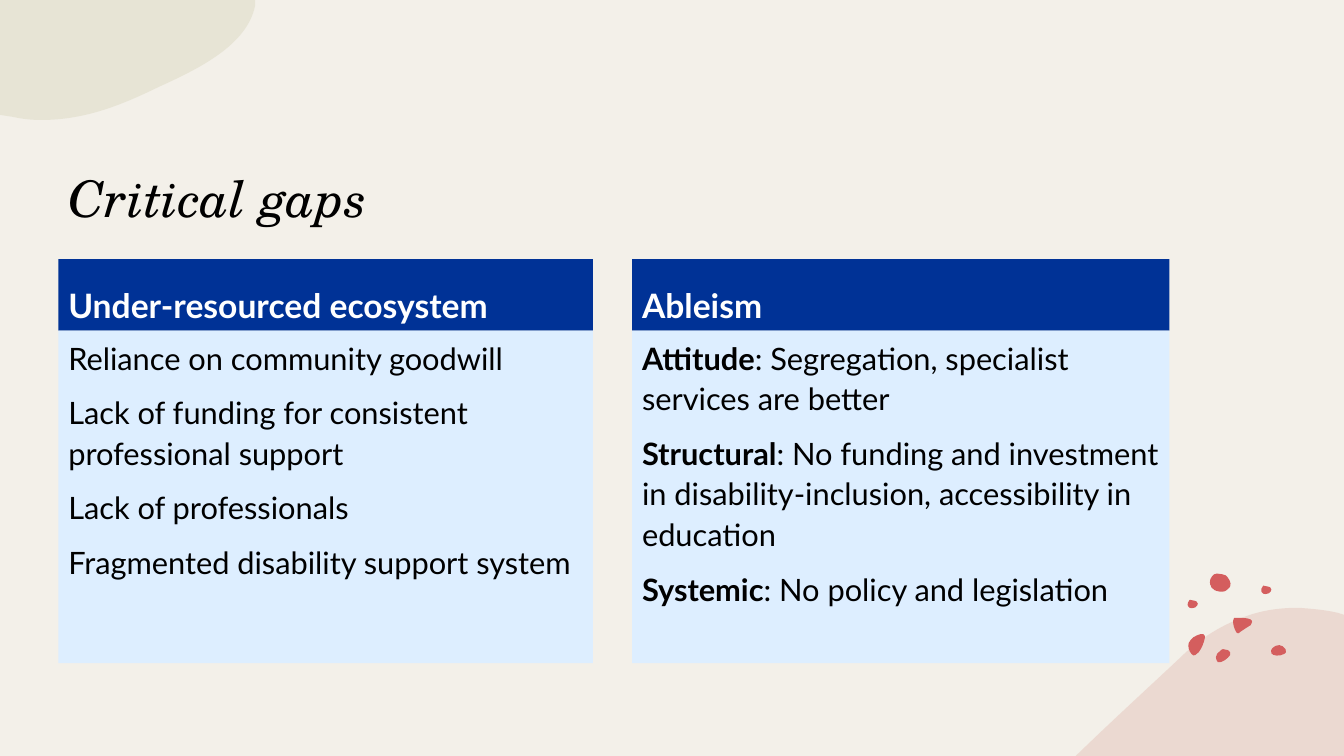
import pptx
import pptx.util
import pptx.dml.color
import pptx.enum.text
import pptx.enum.shapes
import pptx.oxml
import pptx.oxml.ns
import lxml.etree
from dataclasses import dataclass

TITLE = "Critical gaps"
CARDS = [
    ("Under-resourced ecosystem", [
        ("", "Reliance on community goodwill"),
        ("", "Lack of funding for consistent professional support"),
        ("", "Lack of professionals"),
        ("", "Fragmented disability support system"),
    ]),
    ("Ableism", [
        ("Attitude", ": Segregation, specialist services are better"),
        ("Structural", ": No funding and investment in disability-inclusion, "
                       "accessibility in education"),
        ("Systemic", ": No policy and legislation"),
    ]),
]


@dataclass(frozen=True)
class Theme:
    page: str = "F3F0E9"
    ink: str = "000000"
    light: str = "FFFFFF"
    navy: str = "003296"
    sky: str = "DDEEFF"
    rose: str = "E5C4BA"
    olive: str = "DCD9C3"
    coral: str = "D45E5E"
    serif: str = "TeX Gyre Schola"
    sans: str = "Lato"
    title: int = 36
    head: int = 24
    body: int = 22


LOOK = Theme()
WIDE, HIGH = 13.33, 7.5
LEFT, RIGHT = 0.58, 11.6
COLS = [(0.58, 5.3), (6.27, 5.33)]
ROWS = {"title": (0.86, 1.45), "head": (2.57, 0.71), "body": (3.28, 3.3)}

PEBBLE = [(0, 0.05), (0, 0.05, 0, 0.01, 0.02, 0), (0.04, 0, 0.05, 0, 0.07, 0.01),
          (0.08, 0.01, 0.1, 0.02, 0.1, 0.04), (0.1, 0.05, 0.09, 0.07, 0.08, 0.07),
          (0.08, 0.07, 0.08, 0.08, 0.06, 0.08), (0.05, 0.08, 0.03, 0.09, 0.02, 0.08),
          (0, 0.06, 0, 0.06, 0, 0.05)]
HILL = [(2.21, 0), (2.34, 0.01, 2.47, 0.02, 2.6, 0.05), (2.66, 0.07), (2.66, 1.47),
        (0, 1.47), (0.01, 1.46), (0.35, 1.13, 0.7, 0.81, 1.02, 0.51),
        (1.24, 0.29, 1.47, 0.16, 1.7, 0.08), (1.87, 0.02, 2.04, 0, 2.21, 0)]
CLOUD = [(0, 0), (2.53, 0), (2.53, 0.06), (2.45, 0.44, 2, 0.67, 1.58, 0.86),
         (1.23, 1.03, 0.86, 1.19, 0.41, 1.19), (0.31, 1.19, 0.22, 1.18, 0.13, 1.16),
         (0, 1.14), (0, 0)]
BEAN = [(0.07, 0), (0.09, 0, 0.1, 0, 0.12, 0.01), (0.14, 0.02, 0.15, 0.04, 0.14, 0.06),
        (0.12, 0.09, 0.06, 0.14, 0.02, 0.13), (0.01, 0.12, 0, 0.1, 0, 0.08),
        (0, 0.06, 0.02, 0.03, 0.04, 0.02), (0.05, 0.01, 0.06, 0, 0.07, 0)]
LEAF = [(0.12, 0), (0.14, 0, 0.16, 0, 0.16, 0.02), (0.16, 0.03, 0.16, 0.03, 0.16, 0.04),
        (0.15, 0.09, 0.13, 0.14, 0.1, 0.18), (0.08, 0.2, 0.05, 0.23, 0.03, 0.2),
        (0, 0.17, -0.01, 0.12, 0, 0.09), (0.01, 0.06, 0.03, 0.05, 0.05, 0.03),
        (0.06, 0.03, 0.09, 0, 0.12, 0)]
DOME = [(0.08, 0), (0.1, 0, 0.13, 0.02, 0.14, 0.04), (0.15, 0.06, 0.15, 0.08, 0.12, 0.09),
        (0.09, 0.11, 0.01, 0.11, 0, 0.08), (-0.01, 0.06, 0, 0.04, 0.01, 0.03),
        (0.03, 0.01, 0.05, 0, 0.08, 0)]
STONE = [(0.01, 0.12), (0, 0.12, -0.01, 0.06, 0.02, 0.03), (0.04, 0.01, 0.04, 0, 0.07, 0),
         (0.1, 0, 0.14, 0.01, 0.16, 0.02), (0.18, 0.04, 0.22, 0.09, 0.2, 0.13),
         (0.17, 0.16, 0.16, 0.18, 0.12, 0.18), (0.09, 0.18, 0.04, 0.17, 0.03, 0.15),
         (0.01, 0.14, 0.01, 0.13, 0.01, 0.12)]
WEDGE = [(0.05, 0), (0.11, 0, 0.22, 0, 0.18, 0.06), (0.18, 0.07, 0.17, 0.08, 0.16, 0.08),
         (0.13, 0.1, 0.1, 0.12, 0.07, 0.14), (0.06, 0.15, 0.05, 0.16, 0.04, 0.15),
         (0.04, 0.15, 0.03, 0.14, 0.03, 0.14), (0.01, 0.1, 0, 0.07, 0, 0.03),
         (0, 0.02, 0, 0.01, 0.01, 0), (0.01, 0, 0.02, 0, 0.02, 0),
         (0.03, 0, 0.04, 0, 0.05, 0)]
BLOBS = [
    (HILL, 10.67, 6.03, LOOK.rose, 50),
    (BEAN, 12.06, 6.44, LOOK.coral, 100),
    (LEAF, 11.79, 6.29, LOOK.coral, 100),
    (DOME, 12.61, 6.4, LOOK.coral, 100),
    (STONE, 12, 5.69, LOOK.coral, 100),
    (PEBBLE, 12.51, 5.81, LOOK.coral, 100),
    (PEBBLE, 11.78, 5.95, LOOK.coral, 100),
    (WEDGE, 12.23, 6.13, LOOK.coral, 100),
    (CLOUD, 0, 0, LOOK.olive, 50),
]


def inch(num):
    return pptx.util.Inches(num)


def put(item, form):
    for key, val in form.items():
        setattr(item, key, val)


def tint(fill, hue):
    fill.solid()
    fill.fore_color.rgb = pptx.dml.color.RGBColor.from_string(hue)


def plain(shape, hue):
    tint(shape.fill, hue)
    shape.line.fill.background()
    shape.shadow.inherit = False


def bend(shape, curve, left, top):
    tag = pptx.oxml.ns.qn
    lines = list(shape.element.iter(tag("a:lnTo")))
    for part, line in zip(curve[1:], lines):
        if len(part) == 6:
            arc = lxml.etree.Element(tag("a:cubicBezTo"))
            for x, y in zip(part[::2], part[1::2]):
                lxml.etree.SubElement(arc, tag("a:pt"),
                                      x=str(inch(left + x) - shape.left),
                                      y=str(inch(top + y) - shape.top))
            line.getparent().replace(line, arc)


def blob(slide, curve, left, top, hue, alpha):
    dots = [(inch(left + part[-2]), inch(top + part[-1])) for part in curve]
    pen = slide.shapes.build_freeform(*dots[0])
    pen.add_line_segments(dots[1:], close=True)
    shape = pen.convert_to_shape()
    bend(shape, curve, left, top)
    plain(shape, hue)
    if alpha < 100:
        tone = next(shape.element.iter(pptx.oxml.ns.qn("a:srgbClr")))
        lxml.etree.SubElement(tone, pptx.oxml.ns.qn("a:alpha"), val=str(alpha * 1000))


def write(frame, lines, anchor, form, hue, space):
    put(frame, {"word_wrap": True, "vertical_anchor": anchor,
                "auto_size": pptx.enum.text.MSO_AUTO_SIZE.NONE})
    for num, runs in enumerate(lines):
        para = frame.paragraphs[0] if num == 0 else frame.add_paragraph()
        put(para, {"alignment": pptx.enum.text.PP_ALIGN.LEFT, "line_spacing": space,
                   "space_before": pptx.util.Pt(10 if num else 0)})
        for text, bold in runs:
            if text:
                run = para.add_run()
                run.text = text
                put(run.font, {**form, "bold": bold})
                tint(run.font.fill, hue)


def panel(slide, col, row, hue):
    (left, wide), (top, high) = col, ROWS[row]
    shape = slide.shapes.add_shape(pptx.enum.shapes.MSO_SHAPE.RECTANGLE,
                                   inch(left), inch(top), inch(wide), inch(high))
    plain(shape, hue)
    return shape.text_frame


def main():
    deck = pptx.Presentation()
    put(deck, {"slide_width": inch(WIDE), "slide_height": inch(HIGH)})
    slide = deck.slides.add_slide(deck.slide_layouts[5])
    tint(slide.background.fill, LOOK.page)
    for item in BLOBS:
        blob(slide, *item)

    low = pptx.enum.text.MSO_ANCHOR.BOTTOM
    high = pptx.enum.text.MSO_ANCHOR.TOP
    size = pptx.util.Pt
    top, tall = ROWS["title"]
    title = slide.shapes.title
    title.element.getparent().append(title.element)
    put(title, {"left": inch(LEFT), "top": inch(top),
                "width": inch(RIGHT - LEFT), "height": inch(tall)})
    write(title.text_frame, [[(TITLE, False)]], low,
          {"name": LOOK.serif, "size": size(LOOK.title), "italic": True}, LOOK.ink, 1.0)

    for col, (head, lines) in zip(COLS, CARDS):
        write(panel(slide, col, "head", LOOK.navy), [[(head, True)]], low,
              {"name": LOOK.sans, "size": size(LOOK.head)}, LOOK.light, 1.1)
        write(panel(slide, col, "body", LOOK.sky),
              [[(lead, True), (rest, False)] for lead, rest in lines], high,
              {"name": LOOK.sans, "size": size(LOOK.body)}, LOOK.ink, 1.1)
    deck.save("out.pptx")


if __name__ == "__main__":
    main()
